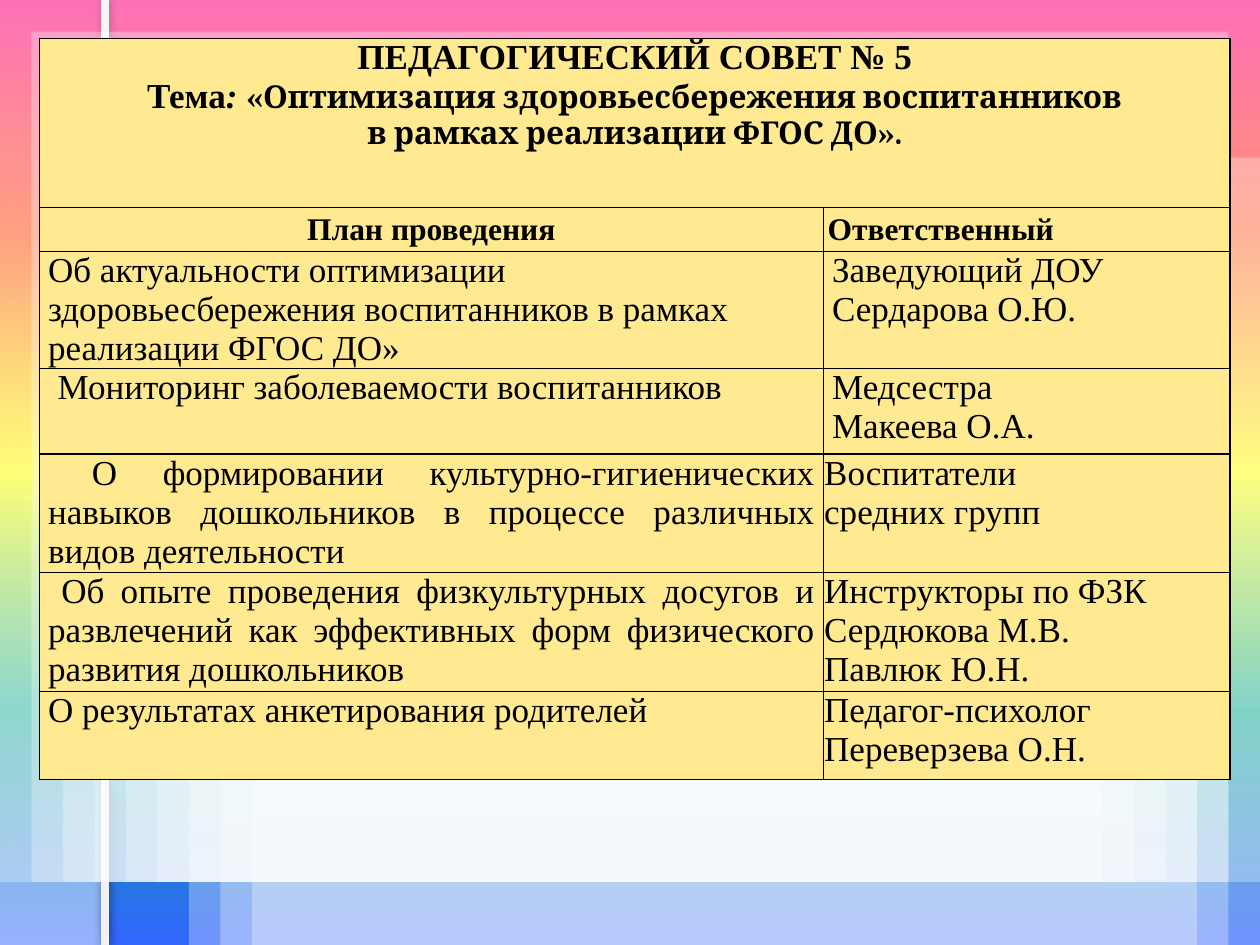
from lxml import etree
from pptx import Presentation
from pptx.dml.color import RGBColor
from pptx.enum import shapes, text
from pptx.oxml.ns import qn
from pptx.util import Pt

THEME = {
    "serif": "Times New Roman", "accent": "Cambria",
    "ink": "000000", "cell": "FFE991", "veil": "FFFFFF", "rule": "F1F1F1",
    "rainbow": [(0, "FF3399", 100), (25, "FF6633", 100), (50, "FFFF00", 100),
                (75, "01A78F", 100), (100, "3366FF", 100)],
    "sheen": [(0, "FFFFFF", 50), (100, "FFFFFF", 0)],
    "body_size": 20, "small_size": 18, "veil_alpha": 30,
}
WIDTH, HEIGHT, STEP = 720, 540, 18
LOWER_VEILS = (108, 90, 720, 540, 3)
UPPER_VEILS = (0, 0, 720, 504, 6)
TABLE_LEFT, TABLE_TOP = 22.5, 22
COLUMNS = [448, 232.5]
ROWS = [96.5, 25.2, 67, 48.8, 67.8, 67.8, 50.4]
CENTER, JUSTIFY = text.PP_ALIGN.CENTER, text.PP_ALIGN.JUSTIFY
LEFT = text.PP_ALIGN.LEFT

TITLE = [
    [("ПЕДАГОГИЧЕСКИЙ СОВЕТ № 5", {})],
    [("Тема", {}), (": ", {"italic": True}),
     ("«Оптимизация здоровьесбережения воспитанников", {"accent": True})],
    [("в рамках реализации ФГОС ДО».", {"accent": True})],
]
HEADERS = [("План проведения", CENTER), ("Ответственный", LEFT)]
PLAN = [
    ("Об актуальности оптимизации здоровьесбережения воспитанников в рамках реализации ФГОС ДО»",
     LEFT, 0, ["Заведующий ДОУ", "Сердарова О.Ю."], 5),
    ("Мониторинг заболеваемости воспитанников",
     JUSTIFY, 5.5, ["Медсестра", "Макеева О.А."], 5),
    ("О формировании культурно-гигиенических навыков дошкольников в процессе различных видов деятельности",
     JUSTIFY, 25, ["Воспитатели", "средних групп"], 0.5),
    ("Об опыте проведения физкультурных досугов и развлечений как эффективных форм физического развития дошкольников",
     JUSTIFY, 7.5, ["Инструкторы по ФЗК", "Сердюкова М.В.", "Павлюк Ю.Н."], 0.5),
    ("О результатах анкетирования родителей",
     LEFT, 0, ["Педагог-психолог", "Переверзева О.Н."], 0.5),
]


def add_node(parent, tag, **attributes):
    node = etree.SubElement(parent, qn(tag))
    for name, value in attributes.items():
        node.set(name, str(value))
    return node


def add_color(parent, color, alpha=100):
    node = add_node(parent, "a:srgbClr", val=color)
    if alpha < 100:
        add_node(node, "a:alpha", val=alpha * 1000)


def set_gradient(fill, owner, stops, angle):
    fill.gradient()
    gradient = owner.find(".//" + qn("a:gradFill"))
    for child in list(gradient):
        gradient.remove(child)
    stop_list = add_node(gradient, "a:gsLst")
    for position, color, alpha in stops:
        add_color(add_node(stop_list, "a:gs", pos=position * 1000), color, alpha)
    add_node(gradient, "a:lin", ang=angle * 60000, scaled=0)


def add_rectangle(slide, left, top, right, bottom):
    shape = slide.shapes.add_shape(shapes.MSO_SHAPE.RECTANGLE, Pt(left), Pt(top),
                                   Pt(right - left), Pt(bottom - top))
    shape.shadow.inherit = False
    shape.line.fill.background()
    return shape


def add_veils(slide, left, top, right, bottom, count):
    for inset in range(0, count * STEP, STEP):
        shape = add_rectangle(slide, left + inset, top + inset, right - inset, bottom)
        shape.fill.solid()
        shape.fill.fore_color.rgb = RGBColor.from_string(THEME["veil"])
        color = shape.fill._xPr.find(".//" + qn("a:srgbClr"))
        add_node(color, "a:alpha", val=THEME["veil_alpha"] * 1000)


def add_side_rule(slide):
    strip = add_rectangle(slide, 0, 0, 61, HEIGHT)
    set_gradient(strip.fill, strip._element, THEME["sheen"], 270)
    rule = slide.shapes.add_connector(shapes.MSO_CONNECTOR.STRAIGHT,
                                      Pt(60), Pt(0), Pt(60), Pt(HEIGHT))
    rule.line.width = Pt(4.5)
    rule.line.color.rgb = RGBColor.from_string(THEME["rule"])
    effects = add_node(rule._element.spPr, "a:effectLst")
    shadow = add_node(effects, "a:outerShdw", blurRad=Pt(5), dist=0, dir=0)
    add_color(shadow, THEME["ink"], 40)


def style_cell(cell, margin):
    cell.margin_left = cell.margin_right = Pt(margin)
    cell.margin_top = cell.margin_bottom = 0
    properties = cell._tc.get_or_add_tcPr()
    for side in ("a:lnL", "a:lnR", "a:lnT", "a:lnB"):
        border = add_node(properties, side, w=Pt(1))
        add_color(add_node(border, "a:solidFill"), THEME["ink"])
    cell.fill.solid()
    cell.fill.fore_color.rgb = RGBColor.from_string(THEME["cell"])


def style_font(font, size, bold):
    font.name, font.size, font.bold = THEME["serif"], Pt(size), bold
    font.color.rgb = RGBColor.from_string(THEME["ink"])


def write_cell(cell, lines, margin, align=LEFT, size=THEME["body_size"],
               bold=False, indent=0, spacing=1.0):
    style_cell(cell, margin)
    frame = cell.text_frame
    frame.text = "\n".join(lines)
    for paragraph in frame.paragraphs:
        paragraph.alignment = align
        paragraph.line_spacing = spacing
        style_font(paragraph.font, size, bold)
        if indent:
            paragraph._p.get_or_add_pPr().set("indent", str(Pt(indent)))


def write_title(cell):
    write_cell(cell, [""] * len(TITLE), 8.5, CENTER, bold=True)
    for paragraph, runs in zip(cell.text_frame.paragraphs, TITLE):
        for wording, style in runs:
            run = paragraph.add_run()
            run.text = wording
            if style.get("italic"):
                run.font.italic = True
            if style.get("accent"):
                run.font.name = THEME["accent"]
                run.font.size = Pt(THEME["small_size"])


def add_plan_table(slide):
    frame = slide.shapes.add_table(len(ROWS), len(COLUMNS), Pt(TABLE_LEFT), Pt(TABLE_TOP),
                                   Pt(sum(COLUMNS)), Pt(sum(ROWS)))
    table = frame.table
    table.first_row = table.horz_banding = False
    for column, width in zip(table.columns, COLUMNS):
        column.width = Pt(width)
    for row, height in zip(table.rows, ROWS):
        row.height = Pt(height)
    table.cell(0, 0).merge(table.cell(0, 1))
    write_title(table.cell(0, 0))
    style_cell(table.cell(0, 1), 8.5)
    for index, (heading, align) in enumerate(HEADERS):
        write_cell(table.cell(1, index), [heading], 2.5, align,
                   THEME["small_size"], bold=True, spacing=1.15)
    for index, (topic, align, indent, people, margin) in enumerate(PLAN, start=2):
        write_cell(table.cell(index, 0), [topic], 5, align, indent=indent)
        write_cell(table.cell(index, 1), people, margin)


def main():
    """Build the teachers' council plan slide."""
    presentation = Presentation()
    presentation.slide_width, presentation.slide_height = Pt(WIDTH), Pt(HEIGHT)
    slide = presentation.slides.add_slide(presentation.slide_layouts[6])
    set_gradient(slide.background.fill, slide._element, THEME["rainbow"], 90)
    add_veils(slide, *LOWER_VEILS)
    add_side_rule(slide)
    add_veils(slide, *UPPER_VEILS)
    add_plan_table(slide)
    presentation.save("out.pptx")


if __name__ == "__main__":
    main()
